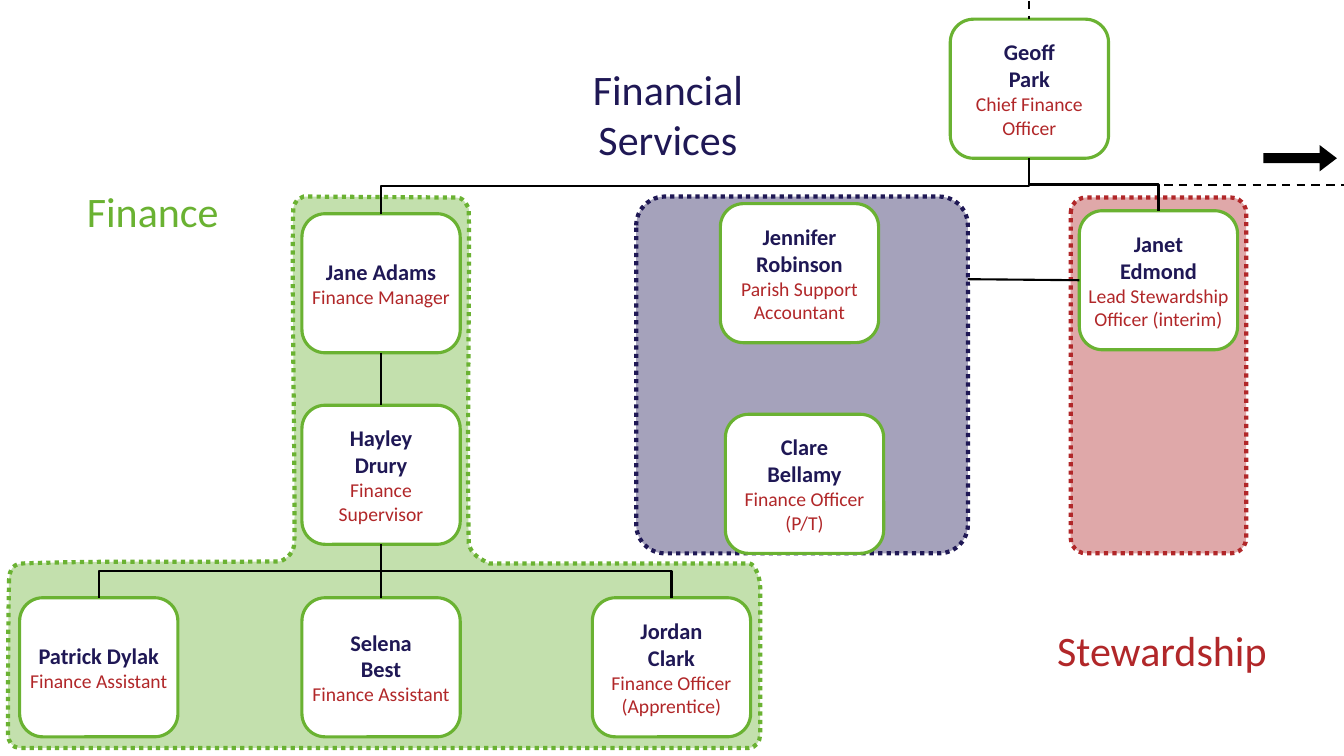
"""Build the organisation chart of the finance and stewardship teams."""
from lxml import etree
from pptx import Presentation
from pptx import util as u
from pptx.dml.color import RGBColor
from pptx.enum import dml, shapes, text
from pptx.oxml.ns import qn

COLOURS = {"navy": "1F1855", "red": "B12729", "green": "6AB232",
           "white": "FFFFFF", "black": "000000"}
FONT = "Calibri"
SLIDE_W, SLIDE_H = 13.33, 7.5
CARD_W, CARD_H = 1.57, 1.38

COLUMNS = {"left": 0.98, "finance": 3.78, "right": 6.66, "parish": 7.93,
           "officer": 7.98, "chief": 10.21, "stewardship": 11.49}
ROWS = {"chief": 0.19, "parish": 2.02, "stewardship": 2.09, "manager": 2.12,
        "supervisor": 4.02, "officer": 4.11, "assistants": 5.93}

CARDS = {
    "Jane": ("finance", "manager", ["Jane Adams"], "Finance Manager"),
    "Janet": ("stewardship", "stewardship", ["Janet", "Edmond"],
              "Lead Stewardship Officer (interim)"),
    "Jennifer": ("parish", "parish", ["Jennifer Robinson"], "Parish Support Accountant"),
    "Clare": ("officer", "officer", ["Clare", "Bellamy"], "Finance Officer (P/T)"),
    "Hayley": ("finance", "supervisor", ["Hayley", "Drury"], "Finance Supervisor"),
    "Jordan": ("right", "assistants", ["Jordan", "Clark"], "Finance Officer (Apprentice)"),
    "Selena": ("finance", "assistants", ["Selena", "Best"], "Finance Assistant"),
    "Patrick": ("left", "assistants", ["Patrick Dylak"], "Finance Assistant"),
    "Geoff": ("chief", "chief", ["Geoff", "Park"], "Chief Finance Officer"),
}
REPORTS = [("Geoff", "Janet"), ("Geoff", "Jane"), ("Jane", "Hayley"),
           ("Hayley", "Patrick"), ("Hayley", "Jordan"), ("Hayley", "Selena")]
PANELS = [((6.31, 1.95, 3.29, 3.54), "navy"), ((10.62, 1.96, 1.74, 3.53), "red")]
HEADINGS = [((4.45, 0.58, 4.35, 1.11), ["Financial", "Services"], "navy"),
            ((-0.66, 1.79, 4.35, 0.61), ["Finance"], "green"),
            ((9.35, 6.15, 4.35, 0.61), ["Stewardship"], "red")]
FINANCE_START = (0.09, 5.78)
FINANCE_OUTLINE = [
    (0.09, 5.7, 0.1, 5.59, 0.23, 5.59), (1.08, 5.56, 1.93, 5.58, 2.78, 5.57),
    (2.85, 5.54, 2.92, 5.48, 2.92, 5.38), (2.93, 4.76, 2.89, 2.66, 2.91, 2.06),
    (2.94, 1.98, 2.94, 1.99, 3.01, 1.95), (4.47, 1.96),
    (4.56, 1.96, 4.59, 1.95, 4.65, 2.07), (4.66, 2.75, 4.63, 4.49, 4.65, 5.39),
    (4.67, 5.51, 4.78, 5.55, 4.85, 5.59), (7.43, 5.59),
    (7.49, 5.59, 7.54, 5.74, 7.54, 5.82), (7.54, 7.29),
    (7.54, 7.36, 7.49, 7.42, 7.43, 7.42), (0.19, 7.42),
    (0.13, 7.42, 0.08, 7.36, 0.08, 7.29), (0.08, 6.8, 0.08, 6.26, 0.09, 5.78)]


def colour(name):
    return RGBColor.from_string(COLOURS[name])


def inches(values):
    return [u.Inches(value) for value in values]


def paint(shape, fill=None, line=None, width=0):
    shape.shadow.inherit = False
    if fill:
        shape.fill.solid()
        shape.fill.fore_color.rgb = colour(fill)
    else:
        shape.fill.background()
    if line:
        shape.line.color.rgb = colour(line)
        shape.line.width = u.Pt(width)
    else:
        shape.line.fill.background()


def paint_panel(shape, name):
    paint(shape, name, name, 3)
    shape.line.dash_style = dml.MSO_LINE.ROUND_DOT
    tint = shape._element.spPr.find(qn("a:solidFill")).find(qn("a:srgbClr"))
    etree.SubElement(tint, qn("a:alpha")).set("val", "40000")


def write(frame, lines):
    frame.word_wrap = True
    for index, (words, size, name, bold) in enumerate(lines):
        para = frame.paragraphs[0] if index == 0 else frame.add_paragraph()
        para.text = words
        para.alignment = text.PP_ALIGN.CENTER
        para.font.name, para.font.size, para.font.bold = FONT, u.Pt(size), bold
        para.font.color.rgb = colour(name)


def add_line(page, start, end, kind=shapes.MSO_CONNECTOR.STRAIGHT, dashed=False):
    line = page.shapes.add_connector(kind, *inches(start + end))
    line.line.color.rgb = colour("black")
    line.line.width = u.Pt(1.5)
    if dashed:
        line.line.dash_style = dml.MSO_LINE.DASH
    etree.SubElement(line._element.spPr, qn("a:effectLst"))
    return line


def add_elbow(page, start, end, preset="bentConnector3", dashed=False):
    (x1, y1), (x2, y2) = start, end
    mid_x, mid_y = (x1 + x2) / 2, (y1 + y2) / 2
    half_w, half_h = abs(y2 - y1) / 2, abs(x2 - x1) / 2
    line = add_line(page, (mid_x - half_w, mid_y - half_h),
                    (mid_x + half_w, mid_y + half_h),
                    shapes.MSO_CONNECTOR.ELBOW, dashed)
    frame = line._element.spPr.find(qn("a:xfrm"))
    frame.set("rot", "5400000")
    if x2 > x1:
        frame.set("flipV", "1")
    line._element.spPr.find(qn("a:prstGeom")).set("prst", preset)


def add_finance_panel(page):
    builder = page.shapes.build_freeform(*inches(FINANCE_START))
    builder.add_line_segments([inches(part[-2:]) for part in FINANCE_OUTLINE], close=True)
    panel = builder.convert_to_shape()
    edges = list(panel._element.iter(qn("a:lnTo")))
    for edge, part in zip(edges, FINANCE_OUTLINE):
        if len(part) == 2:
            continue
        edge_curve = etree.Element(qn("a:cubicBezTo"))
        for x, y in zip(part[::2], part[1::2]):
            point = etree.SubElement(edge_curve, qn("a:pt"))
            point.set("x", str(u.Inches(x) - panel.left))
            point.set("y", str(u.Inches(y) - panel.top))
        edge.getparent().replace(edge, edge_curve)
    paint_panel(panel, "green")


def top(name):
    column, row = CARDS[name][:2]
    return COLUMNS[column], ROWS[row]


def bottom(name):
    x, y = top(name)
    return x, y + CARD_H


def add_card(page, name):
    x, y = top(name)
    card = page.shapes.add_shape(shapes.MSO_SHAPE.FLOWCHART_ALTERNATE_PROCESS,
                                 *inches((x - CARD_W / 2, y, CARD_W, CARD_H)))
    paint(card, None if name == "Geoff" else "white", "green", 2.25)
    frame = card.text_frame
    frame.margin_left = frame.margin_right = frame.margin_top = frame.margin_bottom = 0
    frame.vertical_anchor = text.MSO_ANCHOR.MIDDLE
    names, role = CARDS[name][2:]
    write(frame, [(part, 16, "navy", True) for part in names] + [(role, 14, "red", False)])


def main():
    deck = Presentation()
    deck.slide_width, deck.slide_height = inches((SLIDE_W, SLIDE_H))
    page = deck.slides.add_slide(deck.slide_layouts[6])

    for place, name in PANELS:
        panel = page.shapes.add_shape(shapes.MSO_SHAPE.ROUNDED_RECTANGLE, *inches(place))
        panel.adjustments[0] = 0.087
        paint_panel(panel, name)
    add_finance_panel(page)

    for name in CARDS:
        add_card(page, name)
    for boss, member in REPORTS:
        start, end = bottom(boss), top(member)
        connect = add_line if start[0] == end[0] else add_elbow
        connect(page, start, end)
    chief_x, chief_y = top("Geoff")
    add_line(page, (chief_x, 0.01), (chief_x, chief_y), dashed=True)
    add_elbow(page, bottom("Geoff"), (SLIDE_W, 1.84), "bentConnector2", dashed=True)
    add_line(page, (9.6, 2.77), (COLUMNS["stewardship"] - CARD_W / 2, 2.78))

    for place, lines, name in HEADINGS:
        box = page.shapes.add_textbox(*inches(place))
        box.text_frame.auto_size = text.MSO_AUTO_SIZE.SHAPE_TO_FIT_TEXT
        write(box.text_frame, [(words, 30, name, False) for words in lines])
    arrow = page.shapes.add_shape(shapes.MSO_SHAPE.RIGHT_ARROW,
                                  *inches((12.53, 1.44, 0.73, 0.26)))
    arrow.adjustments[0], arrow.adjustments[1] = 0.38, 0.655
    paint(arrow, "black")
    deck.save("out.pptx")


if __name__ == "__main__":
    main()
